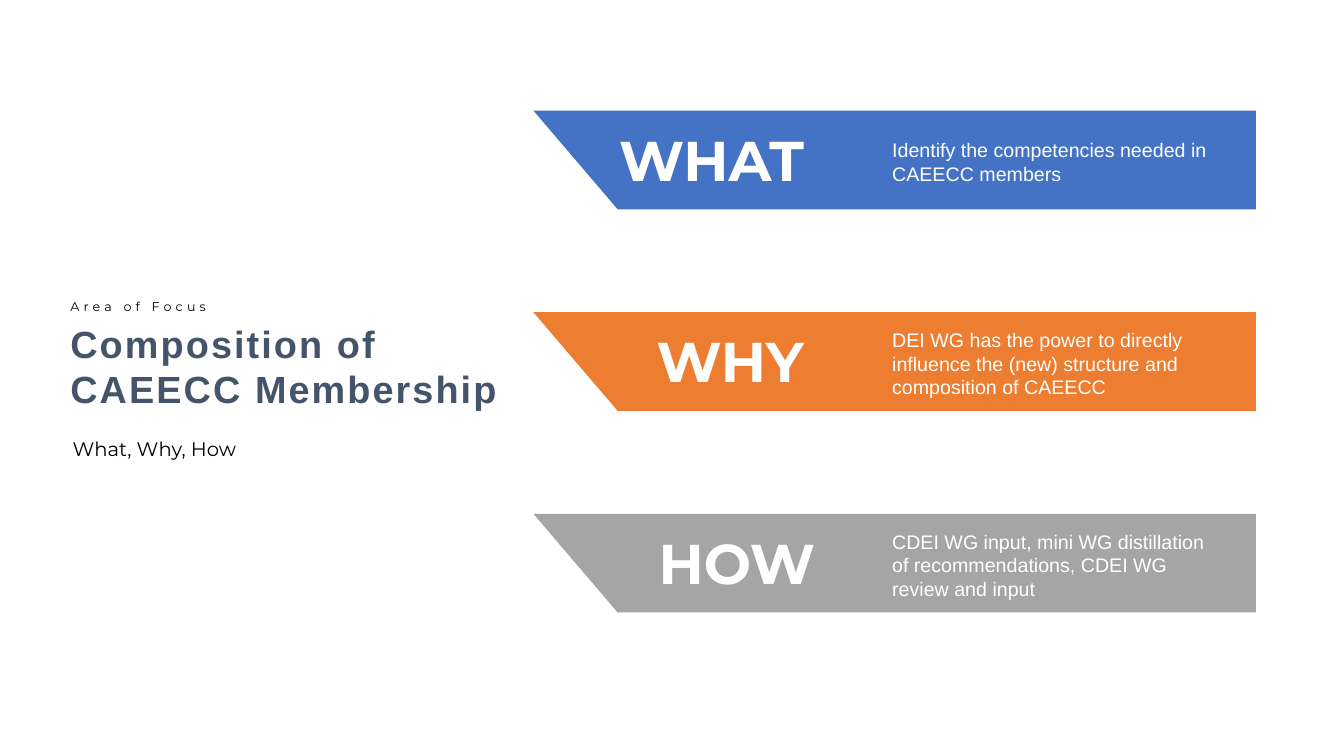
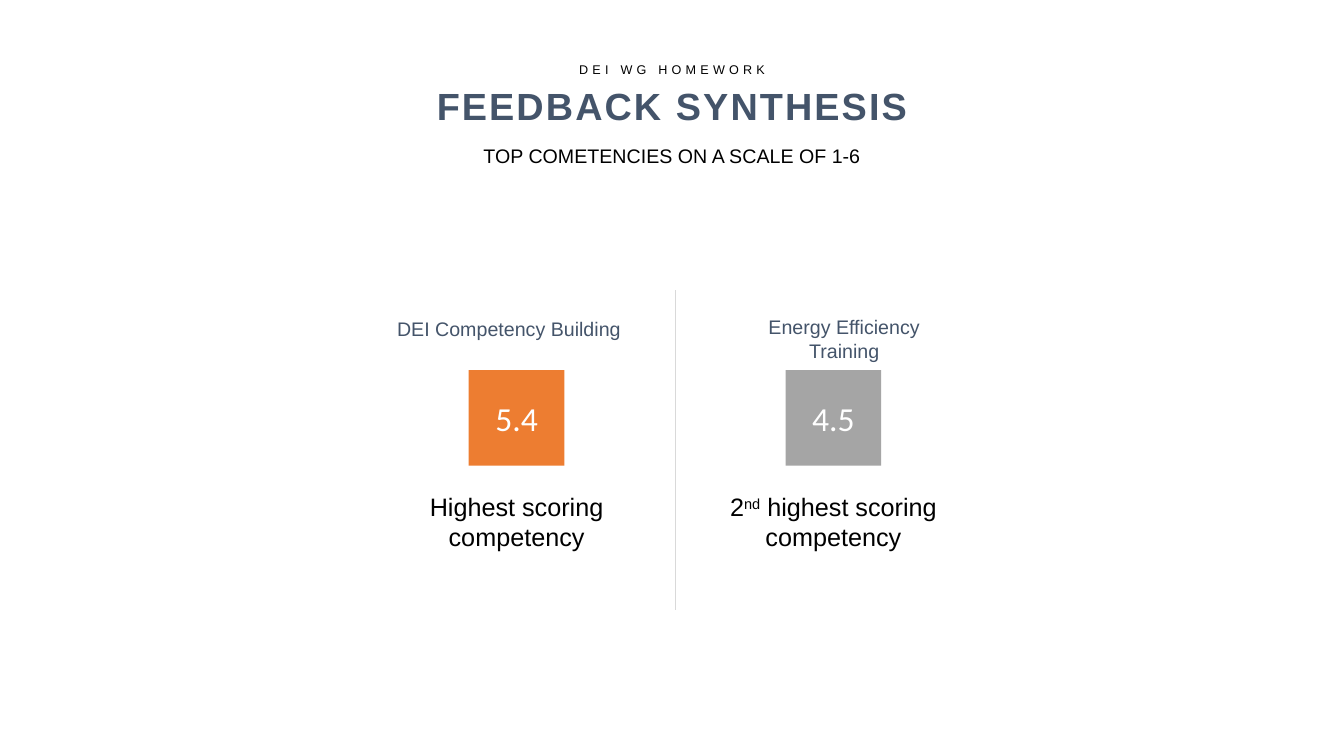
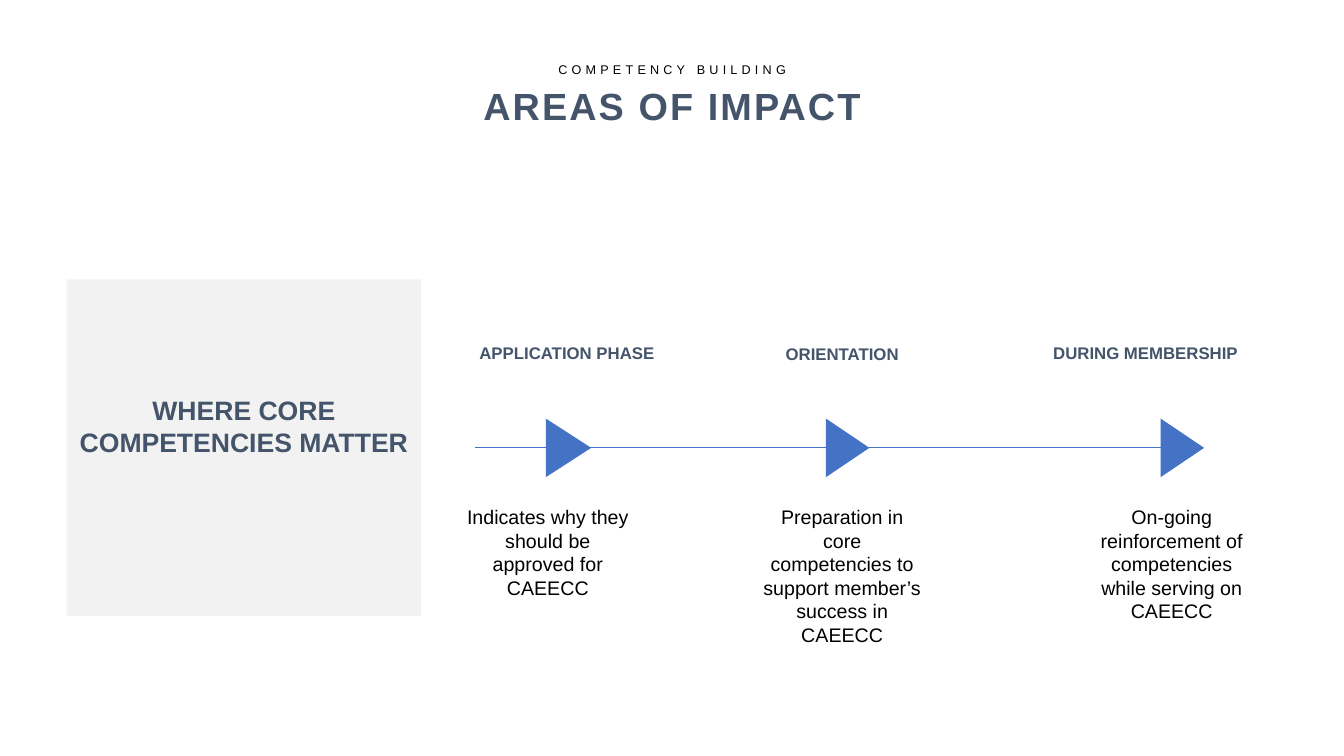
import lxml.etree
import pptx
import pptx.dml.color
import pptx.enum.shapes
import pptx.enum.text
import pptx.oxml.ns
import pptx.util

Pt = pptx.util.Pt
SHAPES = pptx.enum.shapes.MSO_SHAPE
ALIGN = pptx.enum.text.PP_ALIGN
ANCHOR = pptx.enum.text.MSO_ANCHOR

COLORS = {
    "slate": "44546A", "blue": "4472C4", "orange": "ED7D31", "gray": "A5A5A5",
    "panel": "F2F2F2", "rule": "D9D9D9", "black": "000000", "white": "FFFFFF",
}
NARROW, WIDE = (7.2, 3.6), (8.64, 4.32)  # text insets: side, top and bottom


def color(name):
    return pptx.dml.color.RGBColor.from_string(COLORS[name])


def add_text(slide, text, left, top, width, height, *, size, font="Arial", ink="black",
             bold=False, spacing=0, align=ALIGN.CENTER, anchor=ANCHOR.TOP,
             inset=NARROW, leading=None, fill=None):
    """Add a text box, or a filled rectangle with text; ^marks^ enclose superscript."""
    box = [Pt(value) for value in (left, top, width, height)]
    if fill:
        shape = slide.shapes.add_shape(SHAPES.RECTANGLE, *box)
        shape.shadow.inherit = False
        shape.fill.solid()
        shape.fill.fore_color.rgb = color(fill)
        shape.line.fill.background()
    else:
        shape = slide.shapes.add_textbox(*box)
    frame = shape.text_frame
    frame.word_wrap = True
    frame.vertical_anchor = anchor
    frame.margin_left = frame.margin_right = Pt(inset[0])
    frame.margin_top = frame.margin_bottom = Pt(inset[1])
    paragraph = frame.paragraphs[0]
    paragraph.alignment = align
    if leading:
        paragraph.line_spacing = Pt(leading)
        paragraph.space_before = Pt(size * 0.2)
    for index, part in enumerate(text.split("^") if text else []):
        run = paragraph.add_run()
        run.text = part
        run.font.size = Pt(size)
        run.font.name = font
        run.font.bold = bold
        run.font.color.rgb = color(ink)
        properties = run._r.get_or_add_rPr()
        if spacing:
            properties.set("spc", str(int(spacing * 100)))
        if index % 2:
            properties.set("baseline", "30000")


presentation = pptx.Presentation()
presentation.slide_width, presentation.slide_height = Pt(960), Pt(540)

# Slides with their heading: eyebrow, title and subtitle
headings = [
    ("Area of Focus", "Composition of CAEECC Membership", "What, Why, How",
     "Montserrat", ALIGN.LEFT, 43.2, 337.7, 210.2, 303.1),
    ("DEI WG HOMEWORK", "FEEDBACK SYNTHESIS", "TOP COMETENCIES ON A SCALE OF 1-6",
     "Arial", ALIGN.CENTER, 240, 480, 40.3, 93.6),
    ("COMPETENCY BUILDING", "AREAS OF IMPACT", None,
     "Arial", ALIGN.CENTER, 240, 480, 40.3, None),
]
for eyebrow, title, subtitle, font, align, left, width, top, subtitle_top in headings:
    slide = presentation.slides.add_slide(presentation.slide_layouts[6])
    add_text(slide, eyebrow, left, top, width, 18, size=9, font=font, spacing=3, align=align)
    add_text(slide, title, left, top + 15, width, 40, size=27, ink="slate", bold=True,
             spacing=1.5, align=align)
    if subtitle:
        add_text(slide, subtitle, left, subtitle_top, width, 29, size=14, font=font,
                 align=align, inset=WIDE, leading=21.5)
focus_slide, feedback_slide, impact_slide = presentation.slides

# Slide 1: slanted bands
bands = [
    ("WHAT", 508.3, "blue", "Identify the competencies needed in CAEECC members"),
    ("WHY", 521.6, "orange",
     "DEI WG has the power to directly influence the (new) structure and composition of CAEECC"),
    ("HOW", 526.3, "gray",
     "CDEI WG input, mini WG distillation of recommendations, CDEI WG review and input"),
]
for row, (word, center, fill, description) in enumerate(bands):
    top = 79 + 144 * row
    bottom = top + 70.5
    builder = focus_slide.shapes.build_freeform(Pt(381), Pt(top), scale=1.0)
    builder.add_line_segments(
        [(Pt(x), Pt(y)) for x, y in ((897, top), (897, bottom), (441.2, bottom))], close=True)
    band = builder.convert_to_shape()
    band.shadow.inherit = False
    band.fill.solid()
    band.fill.fore_color.rgb = color(fill)
    band.line.fill.background()
    add_text(focus_slide, word, center - 80, top + 7, 160, 55.4, size=40,
             font="Montserrat", ink="white", bold=True)
    add_text(focus_slide, description, 628.6, top + 1.5, 253, 70, size=14, ink="white",
             align=ALIGN.LEFT, anchor=ANCHOR.MIDDLE, inset=WIDE)

# Slide 2: score columns
scores = [
    ("DEI Competency Building", 363.6, 222.5, 186, "5.4", "orange", 369,
     "Highest scoring competency"),
    ("Energy Efficiency Training", 603, 221.4, 170, "4.5", "gray", 595.3,
     "2^nd^ highest scoring competency"),
]
for topic, topic_center, topic_top, topic_width, score, fill, center, caption in scores:
    add_text(feedback_slide, topic, topic_center - topic_width / 2, topic_top, topic_width,
             24.5, size=14, ink="slate")
    add_text(feedback_slide, score, center - 34.2, 264.3, 68.4, 68.4, size=24,
             font="Calibri", ink="white", anchor=ANCHOR.MIDDLE, fill=fill)
    add_text(feedback_slide, caption, center - 88.2, 347, 176.4, 52, size=18,
             inset=WIDE, leading=21.5)

# Slide 3: panel
add_text(impact_slide, "", 47.5, 199.6, 253.4, 240.4, size=19, fill="panel")
add_text(impact_slide, "WHERE CORE COMPETENCIES MATTER", 47.5, 278, 253.4, 78.5,
         size=19, ink="slate", bold=True)

# Slide 3: timeline stages
stages = [
    ("APPLICATION PHASE", 405, 241.2, 406.1, 32.4, 391.3, 137.5,
     "Indicates why they should be approved for CAEECC"),
    ("ORIENTATION", 601.6, 241.9, 605.5, 31, 601.6, 134.6,
     "Preparation in core competencies to support member’s success in CAEECC"),
    ("DURING MEMBERSHIP", 818.3, 241.2, 844.6, 31, 837, 127.4,
     "On-going reinforcement of competencies while serving on CAEECC"),
]
for label, label_center, label_top, marker_center, depth, center, width, description in stages:
    add_text(impact_slide, label, label_center - 90, label_top, 180, 21.6, size=12,
             ink="slate", bold=True)
    marker = impact_slide.shapes.add_shape(
        SHAPES.ISOSCELES_TRIANGLE, Pt(marker_center - 20.9), Pt(319.9 - depth / 2),
        Pt(41.8), Pt(depth))
    marker.rotation = 90
    marker.shadow.inherit = False
    marker.fill.solid()
    marker.fill.fore_color.rgb = color("blue")
    marker.line.fill.background()
    add_text(impact_slide, description, center - width / 2, 356.4, width, 93.6, size=14,
             inset=WIDE)

# Column divider and timeline
for slide, ends, ink in ((feedback_slide, (482.4, 207.4, 482.4, 435.6), "rule"),
                         (impact_slide, (339.1, 319.7, 829.4, 319.7), "blue")):
    line = slide.shapes.add_connector(
        pptx.enum.shapes.MSO_CONNECTOR.STRAIGHT, *[Pt(value) for value in ends])
    line.line.color.rgb = color(ink)
    line.line.width = Pt(0.5)
    lxml.etree.SubElement(line._element.spPr, pptx.oxml.ns.qn("a:effectLst"))

presentation.save("out.pptx")
